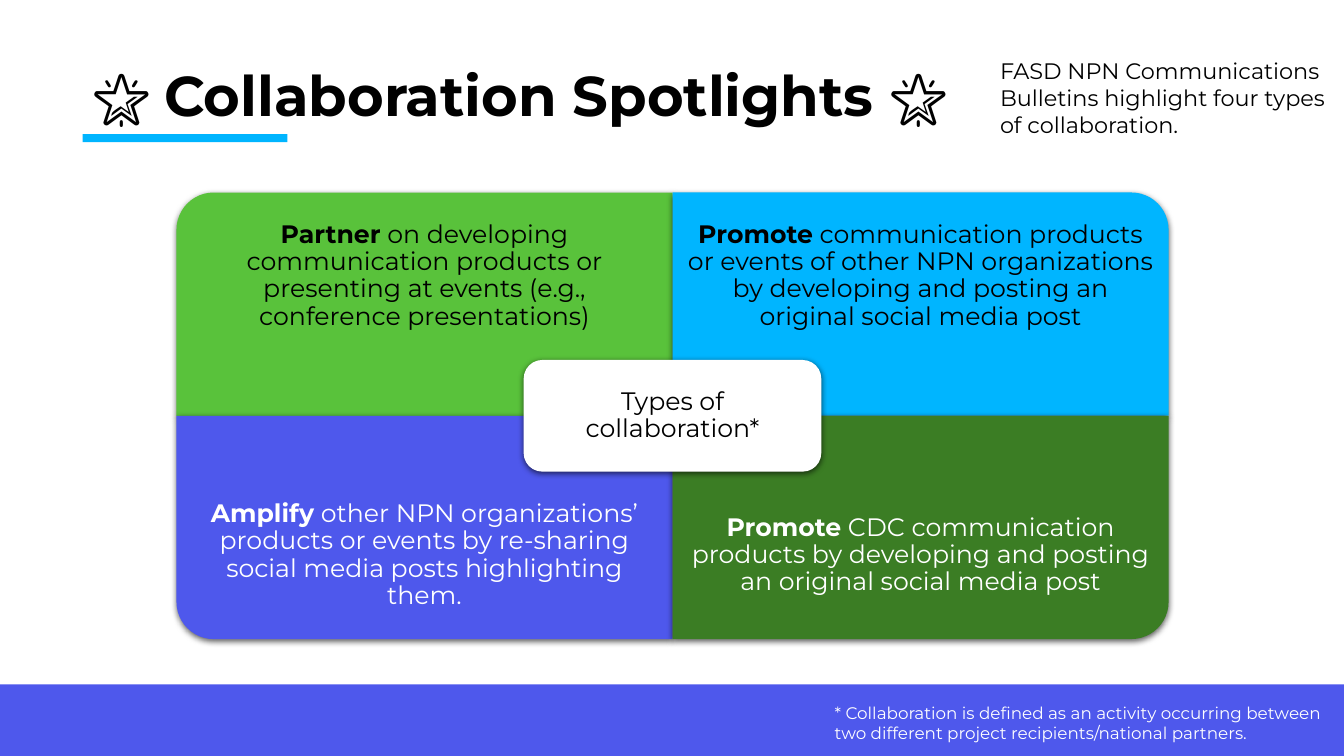
from lxml import etree
from pptx import Presentation
from pptx.dml.color import RGBColor
from pptx.enum.shapes import MSO_SHAPE as SHAPE
from pptx.enum.text import MSO_ANCHOR as ANCHOR, PP_ALIGN as ALIGN
from pptx.oxml.ns import qn
from pptx.util import Inches, Pt

BLACK, WHITE = "000000", "FFFFFF"
INDIGO, SKY, LIME, GREEN = "4E58EC", "00B5FF", "59C23B", "3B7D24"
FONT, STAR_FONT = "Montserrat", "Cabin"


def rgb(value):
    """Turn a hex string into a colour."""
    return RGBColor.from_string(value)


def add_block(s, kind, box, fill, rotation=0, shadow=False):
    """Add a filled, unlined shape in its unrotated box."""
    sp = s.shapes.add_shape(kind, *map(Inches, box))
    sp.fill.solid()
    sp.fill.fore_color.rgb = rgb(fill)
    sp.line.fill.background()
    sp.rotation = rotation
    sp.shadow.inherit = False
    if shadow:
        effects = sp._element.spPr.find(qn("a:effectLst"))
        outer = etree.SubElement(effects, qn("a:outerShdw"), blurRad=str(Pt(4.5)),
                                 dist=str(Pt(1.5)), dir="5400000", algn="ctr", rotWithShape="0")
        color = etree.SubElement(outer, qn("a:srgbClr"), val=BLACK)
        etree.SubElement(color, qn("a:alpha"), val="63000")
    return sp


def write(sp, runs, size, color, align=ALIGN.LEFT, anchor=ANCHOR.TOP, spacing=1.0, inset=None):
    """Fill a shape with one paragraph of (text, bold, font) runs."""
    tf = sp.text_frame
    tf.word_wrap = True
    tf.vertical_anchor = anchor
    if inset is not None:
        for side in ("left", "right", "top", "bottom"):
            setattr(tf, f"margin_{side}", Inches(inset))
    p = tf.paragraphs[0]
    p.alignment, p.line_spacing = align, spacing
    for text, bold, font in runs:
        r = p.add_run()
        r.text = text
        for name, value in {"name": font, "size": Pt(size), "bold": bold}.items():
            setattr(r.font, name, value)
        r.font.color.rgb = rgb(color)


def add_text(s, box, runs, size, color, **style):
    """Add a text box with its runs."""
    write(s.shapes.add_textbox(*map(Inches, box)), runs, size, color, **style)


def add_title(s, box):
    """Place the title and its underline."""
    x, y, w, h = box
    add_block(s, SHAPE.RECTANGLE, (x, y + h, 2.03, 0.08), SKY)
    sp = s.shapes.title
    sp.left, sp.top, sp.width, sp.height = map(Inches, box)
    runs = [("🌟 ", True, STAR_FONT), ("Collaboration Spotlights ", True, FONT),
            ("🌟", True, STAR_FONT)]
    write(sp, runs, 40, BLACK, anchor=ANCHOR.MIDDLE, spacing=0.9)


def add_matrix(s, box):
    """Draw four quadrants, each rounded at its outer corner, and a centre label."""
    x, y, w, h = box
    qw, qh = w / 2, h / 2
    style = {"align": ALIGN.CENTER, "anchor": ANCHOR.MIDDLE, "spacing": 0.9}
    quadrants = [
        (0, 0, 270, LIME, BLACK, "Partner",
         " on developing communication products or presenting at events (e.g., "
         "conference presentations)"),
        (1, 0, 0, SKY, BLACK, "Promote",
         " communication products or events of other NPN organizations by developing "
         "and posting an original social media post"),
        (0, 1, 180, INDIGO, WHITE, "Amplify",
         " other NPN organizations’ products or events by re-sharing social media "
         "posts highlighting them."),
        (1, 1, 90, GREEN, WHITE, "Promote",
         " CDC communication products by developing and posting an original social "
         "media post"),
    ]
    for col, row, turn, fill, color, verb, rest in quadrants:
        qx, qy = x + col * qw, y + row * qh
        sw, sh = (qh, qw) if turn % 180 else (qw, qh)
        shape_box = (qx + (qw - sw) / 2, qy + (qh - sh) / 2, sw, sh)
        add_block(s, SHAPE.ROUND_1_RECTANGLE, shape_box, fill, turn, shadow=True)
        text_box = (qx, qy + row * qh / 4, qw, qh * 3 / 4)
        add_text(s, text_box, [(verb, True, FONT), (rest, False, FONT)], 18, color,
                 inset=0.14, **style)
    cw, ch = w * 0.3, h / 4
    center = (x + (w - cw) / 2, y + (h - ch) / 2, cw, ch)
    sp = add_block(s, SHAPE.ROUNDED_RECTANGLE, center, WHITE, shadow=True)
    write(sp, [("Types of collaboration*", False, FONT)], 18, BLACK, inset=0.07, **style)


def add_footer(s, box):
    """Draw the bottom band with its footnote."""
    x, y, w, h = box
    add_block(s, SHAPE.RECTANGLE, box, INDIGO)
    note = ("* Collaboration is defined as an activity occurring between two different "
            "project recipients/national partners.")
    add_text(s, (x + 8.18, y + 0.13, 5.08, 0.5), [(note, False, FONT)], 12, WHITE)


def main():
    """Build and save the slide."""
    prs = Presentation()
    prs.slide_width, prs.slide_height = Inches(13.33), Inches(7.5)
    s = prs.slides.add_slide(prs.slide_layouts[5])
    add_footer(s, (0, 6.79, 13.33, 0.71))
    add_title(s, (0.82, 0.62, 11.69, 0.71))
    add_matrix(s, (1.75, 1.91, 9.84, 4.43))
    intro = "FASD NPN Communications Bulletins highlight four types of collaboration."
    add_text(s, (9.82, 0.52, 3.44, 0.91), [(intro, False, FONT)], 16, BLACK)
    prs.save("out.pptx")


if __name__ == "__main__":
    main()
